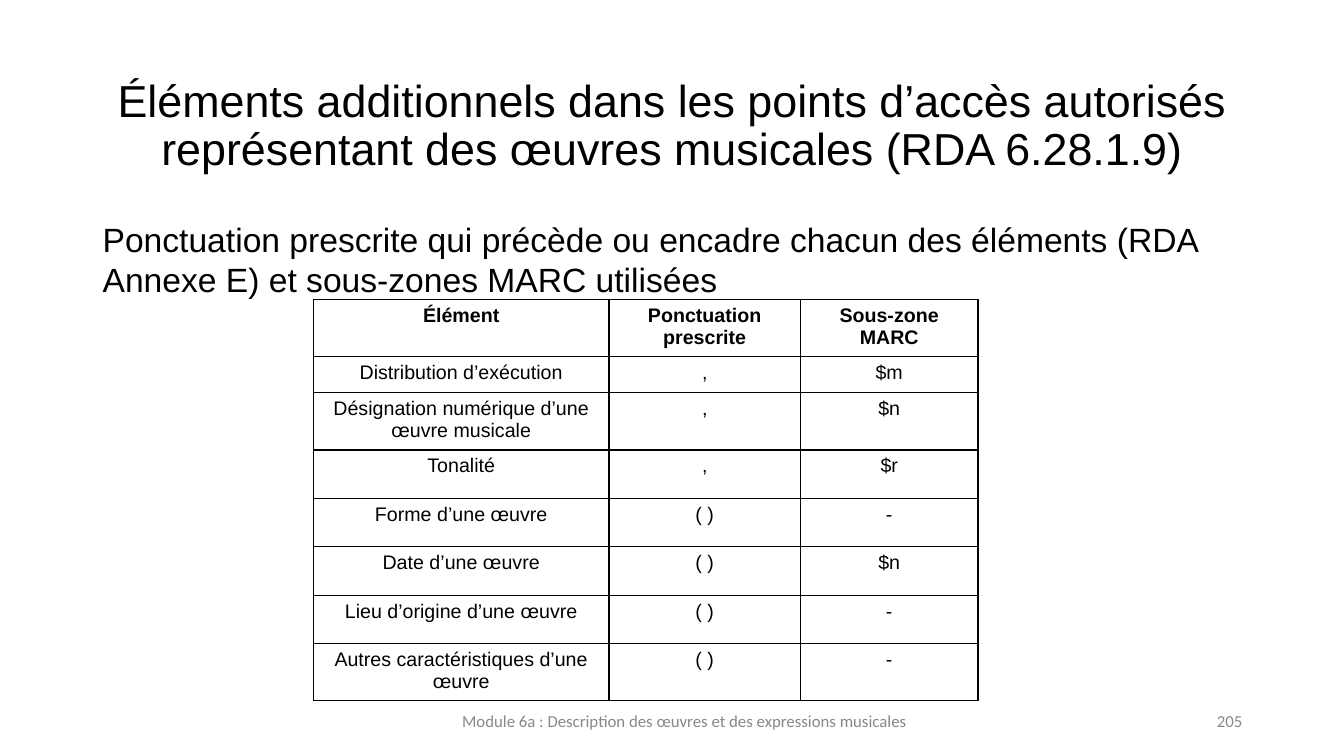
from dataclasses import dataclass

from lxml import etree
from pptx import Presentation
from pptx.dml.color import RGBColor
from pptx.enum.text import MSO_ANCHOR, PP_ALIGN
from pptx.oxml.ns import qn
from pptx.slide import Slide
from pptx.table import _Cell
from pptx.text.text import _Paragraph
from pptx.util import Inches, Pt

CENTER, LEFT, RIGHT = PP_ALIGN.CENTER, PP_ALIGN.LEFT, PP_ALIGN.RIGHT
TOP, MIDDLE = MSO_ANCHOR.TOP, MSO_ANCHOR.MIDDLE
BLACK = RGBColor(0x00, 0x00, 0x00)
GRAY = RGBColor(0x88, 0x88, 0x88)

SLIDE_WIDTH, SLIDE_HEIGHT = 13.33, 7.5
MARGIN = 0.92
CONTENT_WIDTH = 11.5
FOOTER_TOP, FOOTER_HEIGHT = 6.95, 0.4

TABLE_LEFT, TABLE_TOP = 3.11, 2.97
COLUMN_WIDTHS = (2.93, 1.9, 1.76)
ROW_HEIGHTS = (0.54, 0.36, 0.54, 0.48, 0.48, 0.48, 0.48, 0.54)
ROWS = (
    ("Élément", "Ponctuation prescrite", "Sous-zone MARC"),
    ("Distribution d’exécution", ",", "$m"),
    ("Désignation numérique d’une œuvre musicale", ",", "$n"),
    ("Tonalité", ",", "$r"),
    ("Forme d’une œuvre", "( )", "-"),
    ("Date d’une œuvre", "( )", "$n"),
    ("Lieu d’origine d’une œuvre", "( )", "-"),
    ("Autres caractéristiques d’une œuvre", "( )", "-"),
)


@dataclass(frozen=True)
class TextBlock:
    text: str
    left: float
    top: float
    width: float
    height: float
    size: int
    align: PP_ALIGN
    anchor: MSO_ANCHOR = MIDDLE
    font: str = "Arial"
    color: RGBColor = BLACK
    line_spacing: float = 1.0


TEXT_BLOCKS = (
    TextBlock("Éléments additionnels dans les points d’accès autorisés "
              "représentant des œuvres musicales (RDA 6.28.1.9)",
              MARGIN, 0.67, CONTENT_WIDTH, 1.18, 32, CENTER, line_spacing=0.9),
    TextBlock("Ponctuation prescrite qui précède ou encadre chacun des éléments "
              "(RDA Annexe E) et sous-zones MARC utilisées",
              MARGIN, 2.12, CONTENT_WIDTH, 4.64, 24, LEFT, TOP),
    TextBlock("Module 6a : Description des œuvres et des expressions musicales",
              4.42, FOOTER_TOP, 4.74, FOOTER_HEIGHT, 12, CENTER,
              font="Calibri", color=GRAY),
    TextBlock("205", MARGIN + CONTENT_WIDTH - 3, FOOTER_TOP, 3, FOOTER_HEIGHT,
              12, RIGHT, font="Calibri", color=GRAY),
)


def style_paragraph(para: _Paragraph, size: int, align: PP_ALIGN, font: str = "Arial",
                    color: RGBColor = BLACK, bold: bool = False) -> None:
    para.alignment = align
    para.font.name = font
    para.font.size = Pt(size)
    para.font.bold = bold
    para.font.color.rgb = color


def add_text(page: Slide, block: TextBlock) -> None:
    box = page.shapes.add_textbox(Inches(block.left), Inches(block.top),
                                  Inches(block.width), Inches(block.height))
    frame = box.text_frame
    frame.word_wrap = True
    frame.vertical_anchor = block.anchor
    para = frame.paragraphs[0]
    para.text = block.text
    para.line_spacing = block.line_spacing
    style_paragraph(para, block.size, block.align, block.font, block.color)


def add_borders(cell: _Cell) -> None:
    """Draw a thin black line on all four sides, ahead of the cell's fill."""
    properties = cell._tc.get_or_add_tcPr()
    for index, side in enumerate(("a:lnL", "a:lnR", "a:lnT", "a:lnB")):
        line = etree.Element(qn(side), w=str(Pt(1)))
        fill = etree.SubElement(line, qn("a:solidFill"))
        etree.SubElement(fill, qn("a:srgbClr"), val=str(BLACK))
        properties.insert(index, line)


def add_punctuation_table(page: Slide) -> None:
    frame = page.shapes.add_table(
        len(ROWS), len(COLUMN_WIDTHS), Inches(TABLE_LEFT), Inches(TABLE_TOP),
        Inches(sum(COLUMN_WIDTHS)), Inches(sum(ROW_HEIGHTS)))
    table = frame.table
    table.horz_banding = False
    for column, width in zip(table.columns, COLUMN_WIDTHS):
        column.width = Inches(width)
    for row_index, (row, height, texts) in enumerate(zip(table.rows, ROW_HEIGHTS, ROWS)):
        row.height = Inches(height)
        for cell, text in zip(row.cells, texts):
            cell.text = text
            cell.fill.background()
            style_paragraph(cell.text_frame.paragraphs[0], 14, CENTER,
                            bold=row_index == 0)
            add_borders(cell)


def main() -> None:
    deck = Presentation()
    deck.slide_width = Inches(SLIDE_WIDTH)
    deck.slide_height = Inches(SLIDE_HEIGHT)
    page = deck.slides.add_slide(deck.slide_layouts[6])
    for block in TEXT_BLOCKS:
        add_text(page, block)
    add_punctuation_table(page)
    deck.save("out.pptx")


if __name__ == "__main__":
    main()
